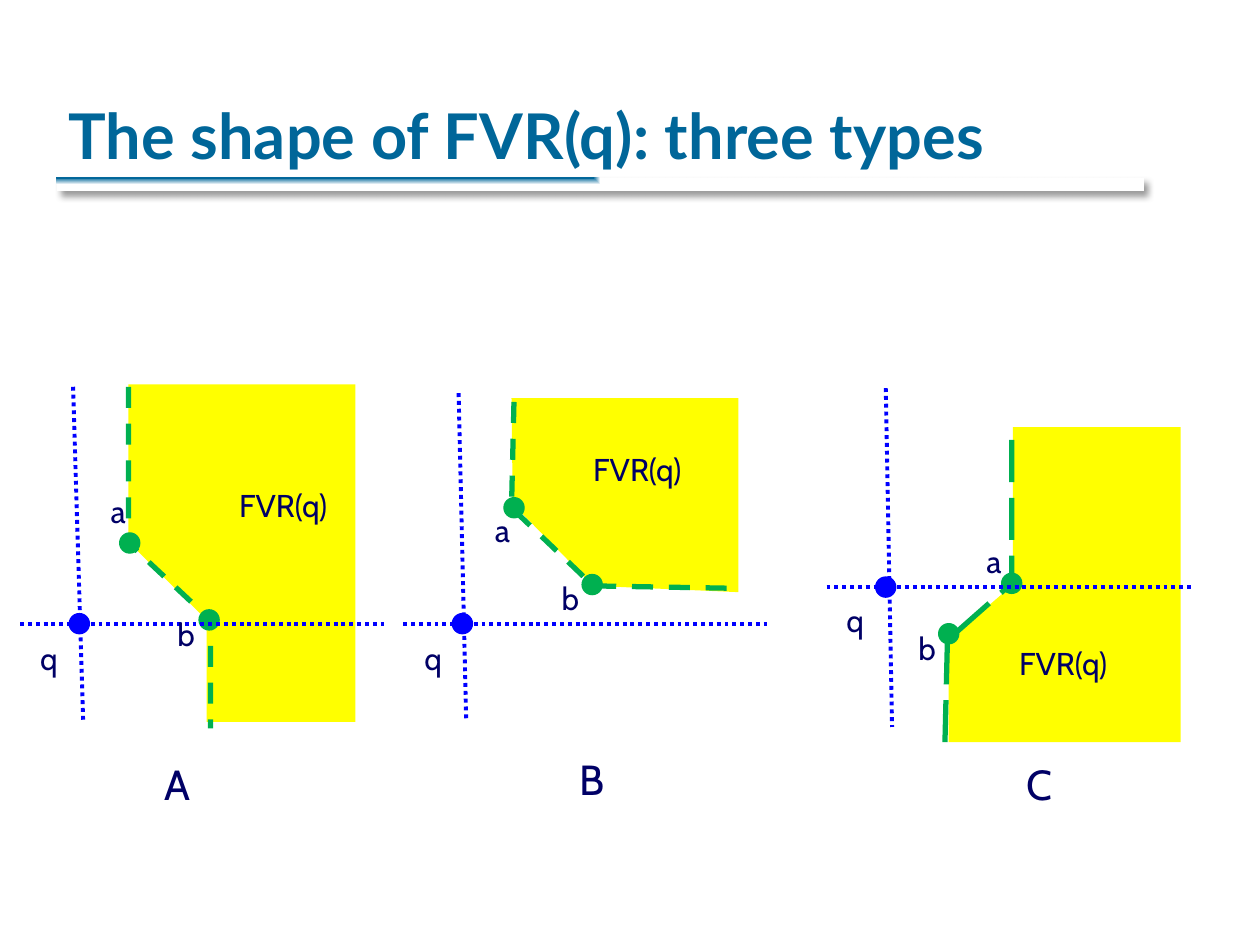
from lxml import etree
from pptx import Presentation
from pptx import util as u
from pptx.dml.color import RGBColor
from pptx.enum import dml, shapes, text
from pptx.oxml import parse_xml
from pptx.oxml.ns import nsdecls, qn

HUES = {"title": "006699", "ink": "000066", "axis": "0000FF",
        "front": "00B050", "area": "FFFF00", "white": "FFFFFF", "shade": "000000"}
COLS, ROWS = 100, 75
DASH = dml.MSO_LINE

PANELS = [
    {"name": "A", "box": (1.6, 30.7), "dash": DASH.DASH,
     "axis": [(4.2, 0), (5, 26.5)],
     "area": [(8.6, -0.2), (26.6, -0.2), (26.6, 26.6), (14.8, 26.6), (14.8, 18.5), (8.6, 12.3)],
     "front": [(8.6, 0), (8.6, 12.4), (15.1, 18.5), (15.1, 27.1)],
     "dots": [(8.7, 12.4), (15, 18.5)],
     "tags": {"q": (0.6, 19.5), "a": (6.2, 7.9), "b": (11.5, 17.6),
              "FVR(q)": (16.4, 7.4), "A": (10.5, 29)}},
    {"name": "B", "box": (32, 30.7), "dash": DASH.DASH,
     "axis": [(4.4, 0.5), (5, 26.5)],
     "area": [(8.6, 0.9), (26.6, 0.9), (26.6, 16.3), (15.1, 15.8), (8.7, 9.3)],
     "front": [(8.8, 1.2), (8.6, 9.6), (15.1, 15.8), (26.9, 16)],
     "dots": [(8.8, 9.6), (15, 15.7)],
     "tags": {"q": (0.7, 19.5), "a": (6.3, 9.4), "b": (11.6, 14.8),
              "FVR(q)": (14.1, 4.5), "B": (13, 28.6)}},
    {"name": "C", "box": (65.6, 27.8), "dash": DASH.LONG_DASH,
     "axis": [(4.7, 3), (5.2, 29.9)],
     "area": [(14.8, 6.1), (28.1, 6.1), (28.1, 31.1), (9.7, 31.1), (9.7, 23), (14.8, 18.6)],
     "front": [(9.4, 31.1), (9.6, 23), (14.7, 18.5), (14.7, 5.9)],
     "dots": [(14.7, 18.5), (9.7, 22.5)],
     "tags": {"q": (0.6, 19.4), "a": (11.7, 14.7), "b": (6.3, 21.6),
              "FVR(q)": (14.3, 22.8), "C": (14.9, 31.9)}},
]
SIZES = {"q": 3.3, "a": 3.1, "b": 3.3, "FVR(q)": 9.2}


def hue(key):
    """Return the named colour."""
    return RGBColor.from_string(HUES[key])


def cell(*vals):
    """Turn grid cells into slide lengths."""
    return [u.Inches(val * 10 / COLS) for val in vals]


def shift(box, spots):
    """Move spots from a panel's own grid to the slide's grid."""
    return [(box[0] + x, box[1] + y) for x, y in spots]


def style(run, face, size, key):
    """Set the font of a run."""
    run.font.name, run.font.size = face, u.Pt(size)
    run.font.color.rgb = hue(key)


def trace(slide, spots, key, dash=None):
    """Draw a filled area, or an open dashed line when a dash is given."""
    pts = [cell(*spot) for spot in spots]
    pen = slide.shapes.build_freeform(*pts[0])
    pen.add_line_segments(pts[1:], close=dash is None)
    form = pen.convert_to_shape()
    form.shadow.inherit = False
    if dash is None:
        form.fill.solid()
        form.fill.fore_color.rgb = hue(key)
        form.line.fill.background()
    else:
        form.fill.background()
        form.line.color.rgb, form.line.width = hue(key), u.Pt(3)
        form.line.dash_style = dash


def ray(slide, start, end):
    """Draw a dotted axis."""
    line = slide.shapes.add_connector(shapes.MSO_CONNECTOR.STRAIGHT, *cell(*start, *end))
    line.line.color.rgb, line.line.width = hue("axis"), u.Pt(2.25)
    line.line.dash_style = DASH.ROUND_DOT
    etree.SubElement(line.element.spPr, qn("a:effectLst"))


def dot(slide, spot, key, size=1.6):
    """Draw a round point centred on a spot."""
    x, y = spot
    disc = slide.shapes.add_shape(
        shapes.MSO_SHAPE.OVAL, *cell(x - size / 2, y - size / 2, size, size))
    disc.shadow.inherit = False
    disc.fill.solid()
    disc.fill.fore_color.rgb = disc.line.color.rgb = hue(key)
    disc.line.width = u.Pt(0.75)


def tag(slide, word, spot):
    """Write a point label, or a larger panel name."""
    width = SIZES.get(word, 4.2)
    size, high = (18, 4) if word in SIZES else (24, 5)
    frame = slide.shapes.add_textbox(*cell(*spot, width, high)).text_frame
    frame.word_wrap = False
    frame.auto_size = text.MSO_AUTO_SIZE.SHAPE_TO_FIT_TEXT
    frame.text = word
    style(frame.paragraphs[0].runs[0], "Cabin", size, "ink")


def panel(slide, part):
    """Draw one type of region with its axes, points and labels."""
    box = part["box"]
    trace(slide, shift(box, part["area"]), "area")
    trace(slide, shift(box, part["front"]), "front", part["dash"])
    for spot in shift(box, part["dots"]):
        dot(slide, spot, "front")
    ray(slide, *shift(box, part["axis"]))
    ray(slide, *shift(box, [(0, 18.8), (28.9, 18.8)]))
    dot(slide, *shift(box, [(4.7, 18.8)]), "axis")
    for word, spot in part["tags"].items():
        tag(slide, word, *shift(box, [spot]))


def rule(slide, box):
    """Draw the soft bar under the title."""
    bar = slide.shapes.add_shape(shapes.MSO_SHAPE.RECTANGLE, *cell(*box))
    bar.line.fill.background()
    props = bar.element.spPr
    fill = parse_xml(
        f'<a:gradFill {nsdecls("a")} rotWithShape="0"><a:gsLst>'
        f'<a:gs pos="0"><a:srgbClr val="{HUES["title"]}"/></a:gs>'
        f'<a:gs pos="100000"><a:srgbClr val="{HUES["white"]}"/></a:gs></a:gsLst>'
        '<a:path path="rect"><a:fillToRect r="100000" b="100000"/></a:path></a:gradFill>')
    props.insert(2, fill)
    props.append(parse_xml(
        f'<a:effectLst {nsdecls("a")}><a:outerShdw blurRad="50800" dist="38100" dir="2700000">'
        f'<a:srgbClr val="{HUES["shade"]}"><a:alpha val="40000"/></a:srgbClr>'
        '</a:outerShdw></a:effectLst>'))


def head(slide, box):
    """Place and format the title."""
    title = slide.shapes.title
    title.left, title.top, title.width, title.height = cell(*box)
    frame = title.text_frame
    frame.text = "The shape of FVR(q): three types"
    frame.vertical_anchor = text.MSO_ANCHOR.BOTTOM
    para = frame.paragraphs[0]
    para.alignment = text.PP_ALIGN.LEFT
    run = para.runs[0]
    style(run, "Lato", 36, "title")
    run.font.bold = True
    run.font._element.set("spc", "10")


def main():
    """Build the slide."""
    deck = Presentation()
    deck.slide_width, deck.slide_height = cell(COLS, ROWS)
    slide = deck.slides.add_slide(deck.slide_layouts[5])
    rule(slide, (4.5, 14.1, 86.3, 1.1))
    head(slide, (4.4, 1.7, 85, 12.5))
    for part in PANELS:
        panel(slide, part)
    deck.save("out.pptx")


if __name__ == "__main__":
    main()
